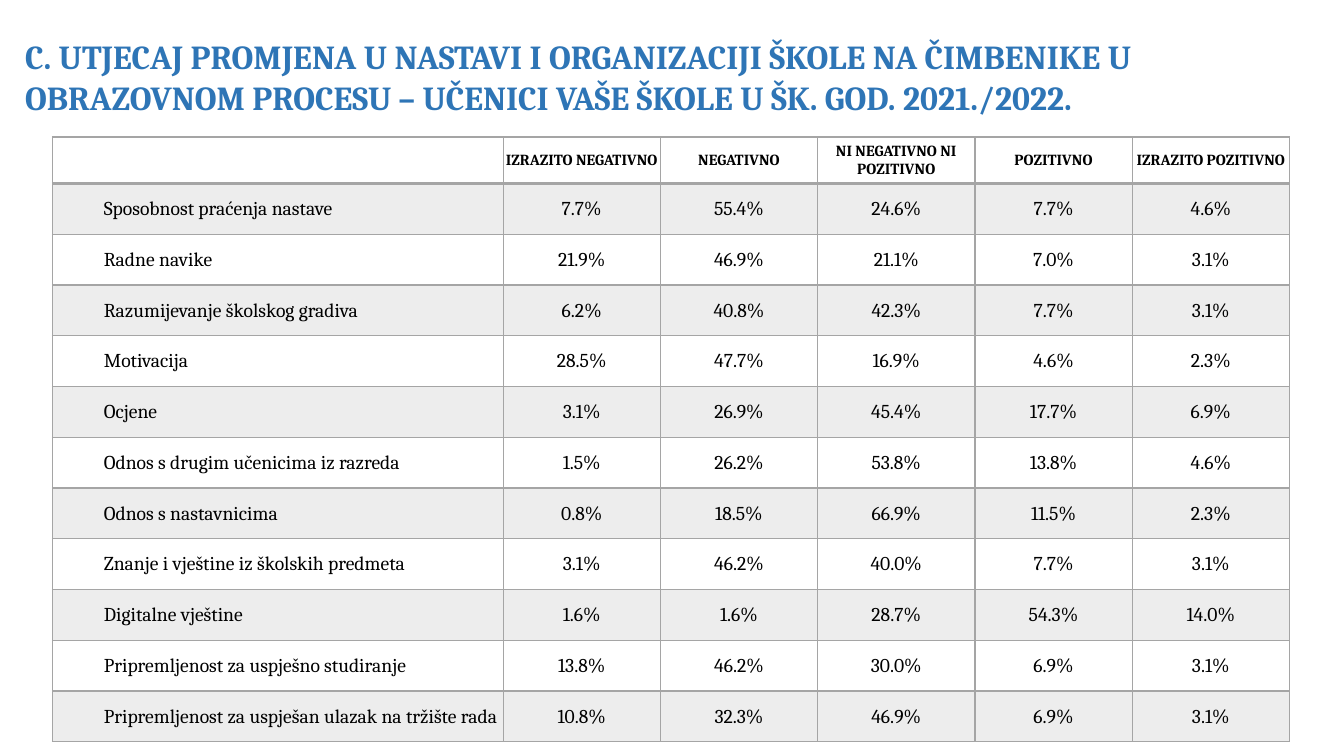
from lxml import etree
from pptx import Presentation
from pptx.dml.color import RGBColor
from pptx.enum.text import MSO_ANCHOR, PP_ALIGN
from pptx.oxml.ns import qn
from pptx.util import Inches, Pt

CENTER, LEFT = PP_ALIGN.CENTER, PP_ALIGN.LEFT
MIDDLE = MSO_ANCHOR.MIDDLE
COLORS = {"title": "2E75B6", "text": "000000", "grey": "A5A5A5"}

HEADERS = ["", "IZRAZITO NEGATIVNO", "NEGATIVNO", "NI NEGATIVNO NI POZITIVNO",
           "POZITIVNO", "IZRAZITO POZITIVNO"]
FACTORS = [
    ("Sposobnost praćenja nastave", 7.7, 55.4, 24.6, 7.7, 4.6),
    ("Radne navike", 21.9, 46.9, 21.1, 7.0, 3.1),
    ("Razumijevanje školskog gradiva", 6.2, 40.8, 42.3, 7.7, 3.1),
    ("Motivacija", 28.5, 47.7, 16.9, 4.6, 2.3),
    ("Ocjene", 3.1, 26.9, 45.4, 17.7, 6.9),
    ("Odnos s drugim učenicima iz razreda", 1.5, 26.2, 53.8, 13.8, 4.6),
    ("Odnos s nastavnicima", 0.8, 18.5, 66.9, 11.5, 2.3),
    ("Znanje i vještine iz školskih predmeta", 3.1, 46.2, 40.0, 7.7, 3.1),
    ("Digitalne vještine", 1.6, 1.6, 28.7, 54.3, 14.0),
    ("Pripremljenost za uspješno studiranje", 13.8, 46.2, 30.0, 6.9, 3.1),
    ("Pripremljenost za uspješan ulazak na tržište rada", 10.8, 32.3, 46.9, 6.9, 3.1),
]
LABEL_WIDTH, VALUE_WIDTH = 4.47, 1.56
TABLE_HEIGHT, HEADER_HEIGHT = 6, 0.46
ROW_HEIGHT = (TABLE_HEIGHT - HEADER_HEIGHT) / len(FACTORS)


def add_text(para, text, size, color="text", bold=False, font="Cambria", align=LEFT):
    para.alignment = align
    span = para.add_run()
    span.text = text
    span.font.name = font
    span.font.size = Pt(size)
    span.font.bold = bold
    span.font.color.rgb = RGBColor.from_string(COLORS[color])


def add_borders(cell, bottom):
    """Draw grey borders, 1 pt wide apart from the bottom one."""
    properties = cell._tc.get_or_add_tcPr()
    sides = [("a:lnL", 1), ("a:lnR", 1), ("a:lnT", 1), ("a:lnB", bottom)]
    for position, (side, width) in enumerate(sides):
        line = etree.Element(qn(side), w=str(Pt(width)))
        fill = etree.SubElement(line, qn("a:solidFill"))
        etree.SubElement(fill, qn("a:srgbClr"), val=COLORS["grey"])
        properties.insert(position, line)


deck = Presentation()
deck.slide_width, deck.slide_height = Inches(13.33), Inches(7.5)
page = deck.slides.add_slide(deck.slide_layouts[6])

title = page.shapes.add_textbox(Inches(0.15), Inches(0.31), Inches(12.48), Inches(0.91))
title.text_frame.word_wrap = True
for text, size, font in [
    ("C. UTJECAJ PROMJENA U NASTAVI I ORGANIZACIJI ŠKOLE NA ČIMBENIKE U "
     "OBRAZOVNOM PROCESU", 24, "Cambria"),
    (" ", 22, "Calibri"),
    ("– UČENICI VAŠE ŠKOLE U ŠK. GOD. 2021./2022.", 24, "Cambria"),
]:
    add_text(title.text_frame.paragraphs[0], text, size, "title", bold=True, font=font)

table = page.shapes.add_table(
    len(FACTORS) + 1, len(HEADERS), Inches(0.52), Inches(1.36),
    Inches(LABEL_WIDTH + 5 * VALUE_WIDTH), Inches(TABLE_HEIGHT)).table
table.first_row = table.horz_banding = False
for index, column in enumerate(table.columns):
    column.width = Inches(VALUE_WIDTH if index else LABEL_WIDTH)
for index, row in enumerate(table.rows):
    row.height = Inches(ROW_HEIGHT if index else HEADER_HEIGHT)

for row_index, entries in enumerate([HEADERS, *FACTORS]):
    for column_index, entry in enumerate(entries):
        cell = table.cell(row_index, column_index)
        cell.vertical_anchor = MIDDLE
        cell.margin_left = cell.margin_right = cell.margin_top = Inches(0.01)
        cell.margin_bottom = 0
        para = cell.text_frame.paragraphs[0]
        if row_index == 0:
            if entry:
                add_text(para, entry, 11, bold=True, align=CENTER)
        elif column_index == 0:
            add_text(para, entry, 14)
            para.level = 1
            indent = para._p.get_or_add_pPr()
            indent.set("marL", str(Inches(0.5)))
            indent.set("indent", "0")
        else:
            add_text(para, f"{entry:.1f}%", 14, align=CENTER)

        if row_index % 2:
            cell.fill.solid()
            cell.fill.fore_color.rgb = RGBColor.from_string(COLORS["grey"])
            tint = cell._tc.tcPr.find(qn("a:solidFill")).find(qn("a:srgbClr"))
            etree.SubElement(tint, qn("a:alpha"), val="20000")
        else:
            cell.fill.background()
        add_borders(cell, bottom=1 if row_index else 2)

deck.save("out.pptx")
